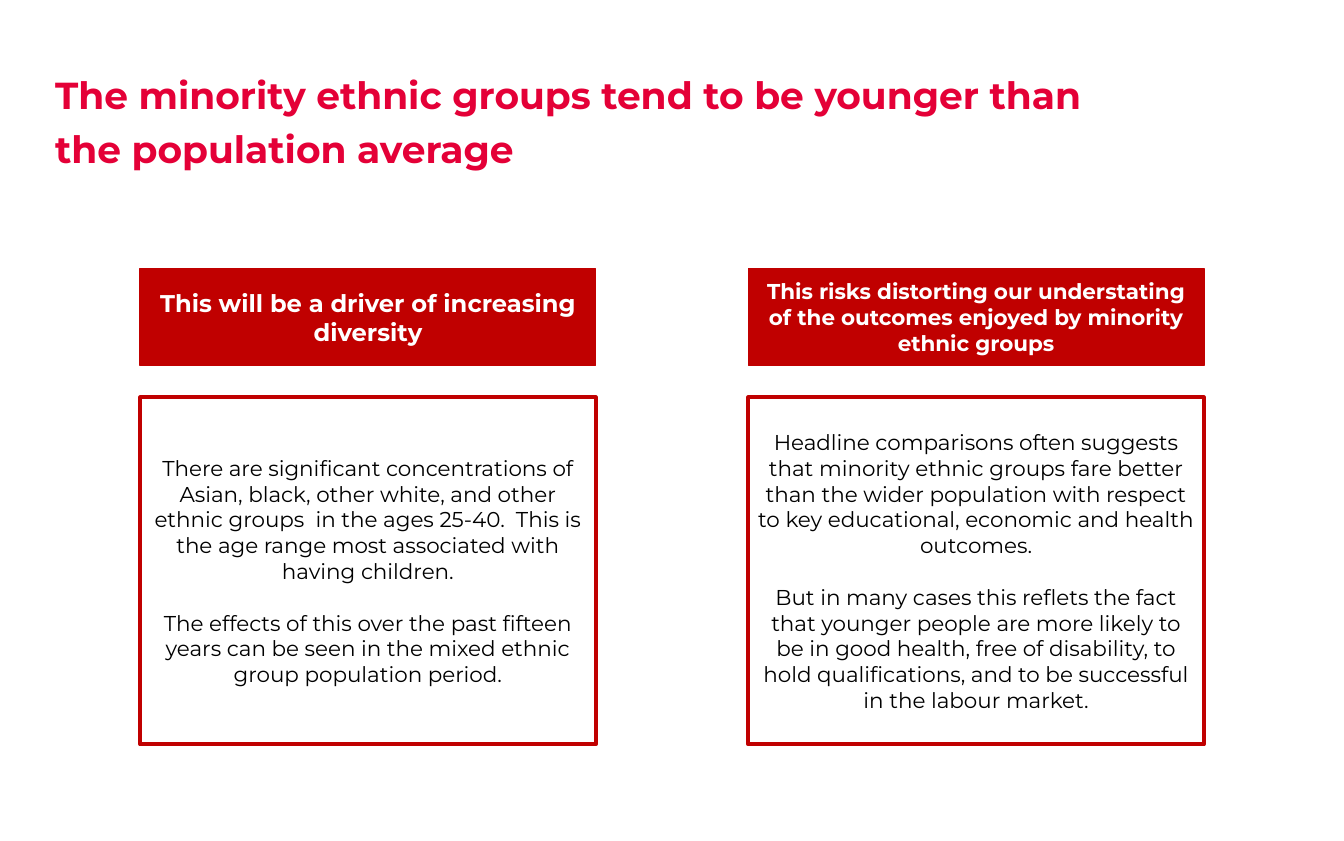
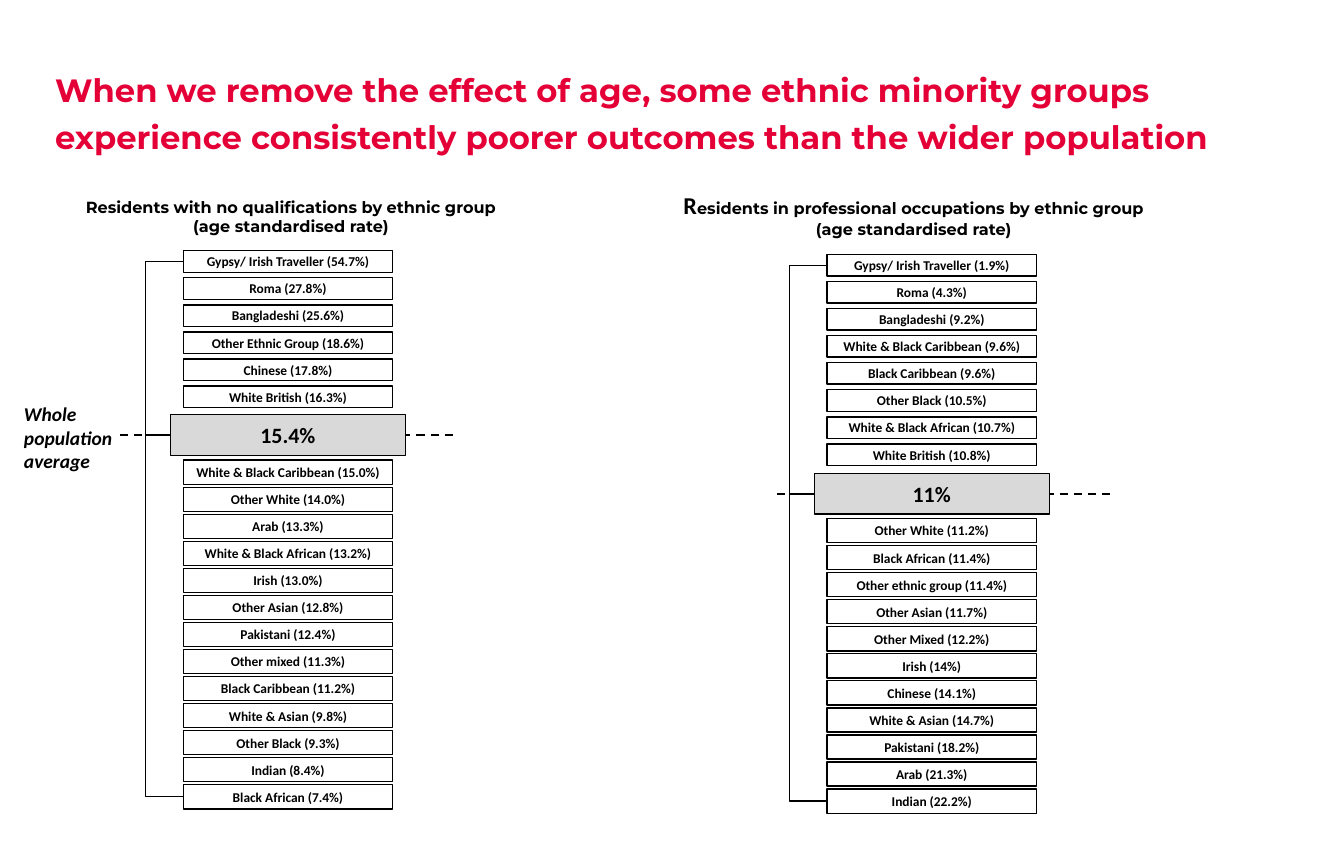
from dataclasses import dataclass

from lxml.etree import SubElement
from pptx import Presentation
from pptx.dml.color import RGBColor
from pptx.enum.dml import MSO_LINE_DASH_STYLE as Dash
from pptx.enum.shapes import MSO_AUTO_SHAPE_TYPE as ShapeType
from pptx.enum.shapes import MSO_CONNECTOR_TYPE as ConnectorType
from pptx.enum.text import MSO_ANCHOR as Anchor
from pptx.enum.text import MSO_AUTO_SIZE as AutoSize
from pptx.enum.text import PP_PARAGRAPH_ALIGNMENT as Align
from pptx.oxml.ns import qn
from pptx.shapes.autoshape import Shape
from pptx.shapes.connector import Connector
from pptx.slide import Slide
from pptx.text.text import Font, TextFrame
from pptx.util import Pt

COLORS = {
    "title": "E40037",
    "card": "C00000",
    "average": "D9D9D9",
    "text": "000000",
    "white": "FFFFFF",
}
HEADING_FONT = "Montserrat"
LABEL_FONT = "Calibri"
TITLE_LAYOUT = 5

CARD_WIDTH = 339.2
CARD_HEADER_TOP, CARD_HEADER_HEIGHT = 200.2, 72
CARD_BODY_TOP, CARD_BODY_HEIGHT = 296, 258.5

ROW_PITCH = 20.15
ROW_WIDTH = 156
UPPER_HEIGHT, LOWER_HEIGHT = 16, 18
AVERAGE_WIDTH, AVERAGE_HEIGHT = 175, 30.2
SPINE_OFFSET = 28
DASH_LENGTH = 252


@dataclass(frozen=True)
class Box:
    left: float
    top: float
    width: float
    height: float


@dataclass(frozen=True)
class TextStyle:
    size: float
    font: str = LABEL_FONT
    color: str = "text"
    bold: bool = True
    italic: bool = False
    align: Align = Align.CENTER
    gap: float = 0


@dataclass(frozen=True)
class Card:
    left: float
    header: str
    header_size: float
    body: list[str]


@dataclass(frozen=True)
class Ranking:
    left: float
    dash_left: float
    upper_top: float
    average_top: float
    lower_top: float
    average: str
    above: list[str]
    below: list[str]


ROW_STYLE = TextStyle(10)
AVERAGE_STYLE = TextStyle(16.3)
HEADING_STYLE = TextStyle(12, HEADING_FONT)
CARD_BODY_STYLE = TextStyle(16, HEADING_FONT, bold=False, gap=19.2)

CARDS = [
    Card(
        104.4,
        "This will be a driver of increasing diversity",
        18,
        [
            "There are significant concentrations of Asian, black, other white, and other "
            "ethnic groups  in the ages 25-40.  This is the age range most associated with "
            "having children.",
            "The effects of this over the past fifteen years can be seen in the mixed ethnic "
            "group population period.",
        ],
    ),
    Card(
        557.3,
        "This risks distorting our understating of the outcomes enjoyed by minority ethnic groups",
        16,
        [
            "Headline comparisons often suggests that minority ethnic groups fare better than "
            "the wider population with respect to key educational, economic and health outcomes.",
            "But in many cases this reflets the fact that younger people are more likely to be "
            "in good health, free of disability, to hold qualifications, and to be successful "
            "in the labour market.",
        ],
    ),
]

RANKINGS = [
    Ranking(
        136.4, 89.3, 186.8, 308.9, 342.7, "15.4%",
        [
            "Gypsy/ Irish Traveller (54.7%)",
            "Roma (27.8%)",
            "Bangladeshi (25.6%)",
            "Other Ethnic Group (18.6%)",
            "Chinese (17.8%)",
            "White British (16.3%)",
        ],
        [
            "White & Black Caribbean (15.0%)",
            "Other White (14.0%)",
            "Arab (13.3%)",
            "White & Black African (13.2%)",
            "Irish (13.0%)",
            "Other Asian (12.8%)",
            "Pakistani (12.4%)",
            "Other mixed (11.3%)",
            "Black Caribbean (11.2%)",
            "White & Asian (9.8%)",
            "Other Black (9.3%)",
            "Indian (8.4%)",
            "Black African (7.4%)",
        ],
    ),
    Ranking(
        615.8, 578.9, 189.6, 352.8, 386.2, "11%",
        [
            "Gypsy/ Irish Traveller (1.9%)",
            "Roma (4.3%)",
            "Bangladeshi (9.2%)",
            "White & Black Caribbean (9.6%)",
            "Black Caribbean (9.6%)",
            "Other Black (10.5%)",
            "White & Black African (10.7%)",
            "White British (10.8%)",
        ],
        [
            "Other White (11.2%)",
            "Black African (11.4%)",
            "Other ethnic group (11.4%)",
            "Other Asian (11.7%)",
            "Other Mixed (12.2%)",
            "Irish (14%)",
            "Chinese (14.1%)",
            "White & Asian (14.7%)",
            "Pakistani (18.2%)",
            "Arab (21.3%)",
            "Indian (22.2%)",
        ],
    ),
]


def color(name: str) -> RGBColor:
    return RGBColor.from_string(COLORS[name])


def set_font(font: Font, style: TextStyle) -> None:
    font.name = style.font
    font.size = Pt(style.size)
    font.bold = style.bold
    font.italic = style.italic
    font.color.rgb = color(style.color)


def write(frame: TextFrame, lines: list[str], style: TextStyle) -> None:
    frame.word_wrap = True
    frame.vertical_anchor = Anchor.MIDDLE
    frame.margin_top = frame.margin_bottom = 0
    for index, line in enumerate(lines):
        paragraph = frame.add_paragraph() if index else frame.paragraphs[0]
        paragraph.text = line
        paragraph.alignment = style.align
        paragraph.space_before = Pt(style.gap if index else 0)
        set_font(paragraph.font, style)


def place(shape: Shape, box: Box) -> None:
    shape.left, shape.top = Pt(box.left), Pt(box.top)
    shape.width, shape.height = Pt(box.width), Pt(box.height)


def add_title_slide(presentation: Presentation, title: str, width: float, size: float) -> Slide:
    slide = presentation.slides.add_slide(presentation.slide_layouts[TITLE_LAYOUT])
    shape = slide.shapes.title
    place(shape, Box(33.8, 43.2, width, 41))
    frame = shape.text_frame
    write(frame, [title], TextStyle(size, HEADING_FONT, "title", align=Align.LEFT))
    frame.auto_size = AutoSize.NONE
    frame.vertical_anchor = Anchor.TOP
    frame.margin_top = Pt(3.6)
    frame.paragraphs[0].line_spacing = 1.2
    return slide


def add_box(slide: Slide, box: Box, lines: list[str], style: TextStyle,
            fill: str = "white", outline: str = "text", weight: float = 1) -> None:
    shape = slide.shapes.add_shape(ShapeType.RECTANGLE, 0, 0, 0, 0)
    place(shape, box)
    shape.shadow.inherit = False
    shape.fill.solid()
    shape.fill.fore_color.rgb = color(fill)
    shape.line.color.rgb = color(outline)
    shape.line.width = Pt(weight)
    write(shape.text_frame, lines, style)


def add_text(slide: Slide, box: Box, lines: list[str], style: TextStyle) -> TextFrame:
    shape = slide.shapes.add_textbox(0, 0, 0, 0)
    place(shape, box)
    write(shape.text_frame, lines, style)
    return shape.text_frame


def add_line(slide: Slide, kind: ConnectorType, start: tuple[float, float],
             end: tuple[float, float], weight: float) -> Connector:
    points = [Pt(value) for value in (*start, *end)]
    connector = slide.shapes.add_connector(kind, *points)
    connector.line.color.rgb = color("text")
    connector.line.width = Pt(weight)
    SubElement(connector._element.spPr, qn("a:effectLst"))
    return connector


def add_bracket(slide: Slide, start: tuple[float, float], end: tuple[float, float],
                spine: float) -> None:
    connector = add_line(slide, ConnectorType.ELBOW, start, end, 1)
    bend = round((spine - start[0]) / (end[0] - start[0]) * 100000)
    adjustments = connector._element.spPr.find(qn("a:prstGeom")).find(qn("a:avLst"))
    SubElement(adjustments, qn("a:gd"), name="adj1", fmla=f"val {bend}")


def add_card(slide: Slide, card: Card) -> None:
    header = Box(card.left, CARD_HEADER_TOP, CARD_WIDTH, CARD_HEADER_HEIGHT)
    body = Box(card.left, CARD_BODY_TOP, CARD_WIDTH, CARD_BODY_HEIGHT)
    header_style = TextStyle(card.header_size, HEADING_FONT, "white")
    add_box(slide, header, [card.header], header_style, "card", "card")
    add_box(slide, body, card.body, CARD_BODY_STYLE, outline="card", weight=3)


def add_rows(slide: Slide, left: float, top: float, height: float, labels: list[str]) -> None:
    for index, label in enumerate(labels):
        box = Box(left, top + index * ROW_PITCH, ROW_WIDTH, height)
        add_box(slide, box, [label], ROW_STYLE)


def add_ranking(slide: Slide, ranking: Ranking) -> None:
    middle = ranking.average_top + AVERAGE_HEIGHT / 2
    dash_end = ranking.dash_left + DASH_LENGTH
    dashes = add_line(slide, ConnectorType.STRAIGHT, (ranking.dash_left, middle),
                      (dash_end, middle), 1.5)
    dashes.line.dash_style = Dash.DASH
    average_left = ranking.left - (AVERAGE_WIDTH - ROW_WIDTH) / 2
    add_box(slide, Box(average_left, ranking.average_top, AVERAGE_WIDTH, AVERAGE_HEIGHT),
            [ranking.average], AVERAGE_STYLE, "average")
    add_rows(slide, ranking.left, ranking.upper_top, UPPER_HEIGHT, ranking.above)
    add_rows(slide, ranking.left, ranking.lower_top, LOWER_HEIGHT, ranking.below)
    first = ranking.upper_top + UPPER_HEIGHT / 2
    last = ranking.lower_top + (len(ranking.below) - 1) * ROW_PITCH + LOWER_HEIGHT / 2
    for row_middle in (first, last):
        add_bracket(slide, (average_left, middle), (ranking.left, row_middle),
                    ranking.left - SPINE_OFFSET)


def main() -> None:
    presentation = Presentation()
    presentation.slide_width, presentation.slide_height = Pt(1000.8), Pt(626.4)

    age_slide = add_title_slide(
        presentation,
        "The minority ethnic groups tend to be younger than the population average", 782, 28)
    for card in CARDS:
        add_card(age_slide, card)

    outcome_slide = add_title_slide(
        presentation,
        "When we remove the effect of age, some ethnic minority groups experience "
        "consistently poorer outcomes than the wider population", 937.4, 24)
    for ranking in RANKINGS:
        add_ranking(outcome_slide, ranking)
    add_text(outcome_slide, Box(10.8, 296, 81, 59.8), ["Whole population average"],
             TextStyle(14.5, italic=True, align=Align.LEFT))
    rate = "(age standardised rate)"
    add_text(outcome_slide, Box(17.3, 146.9, 398.9, 28.8),
             ["Residents with no qualifications by ethnic group", rate], HEADING_STYLE)
    frame = add_text(outcome_slide, Box(501.1, 146.9, 358.6, 25.9), ["R", rate], HEADING_STYLE)
    initial = frame.paragraphs[0].runs[0]
    set_font(initial.font, TextStyle(18))
    frame.paragraphs[0].add_run().text = "esidents in professional occupations by ethnic group"

    presentation.save("out.pptx")


if __name__ == "__main__":
    main()
